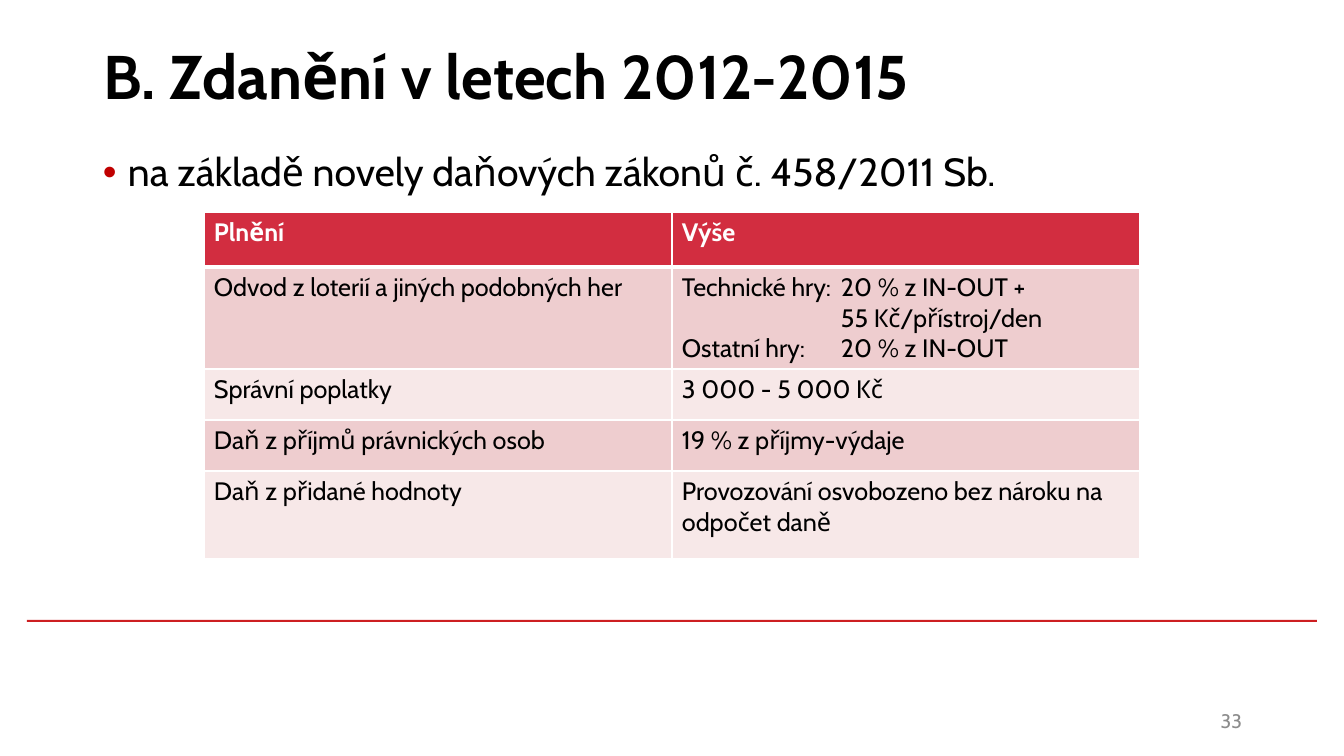
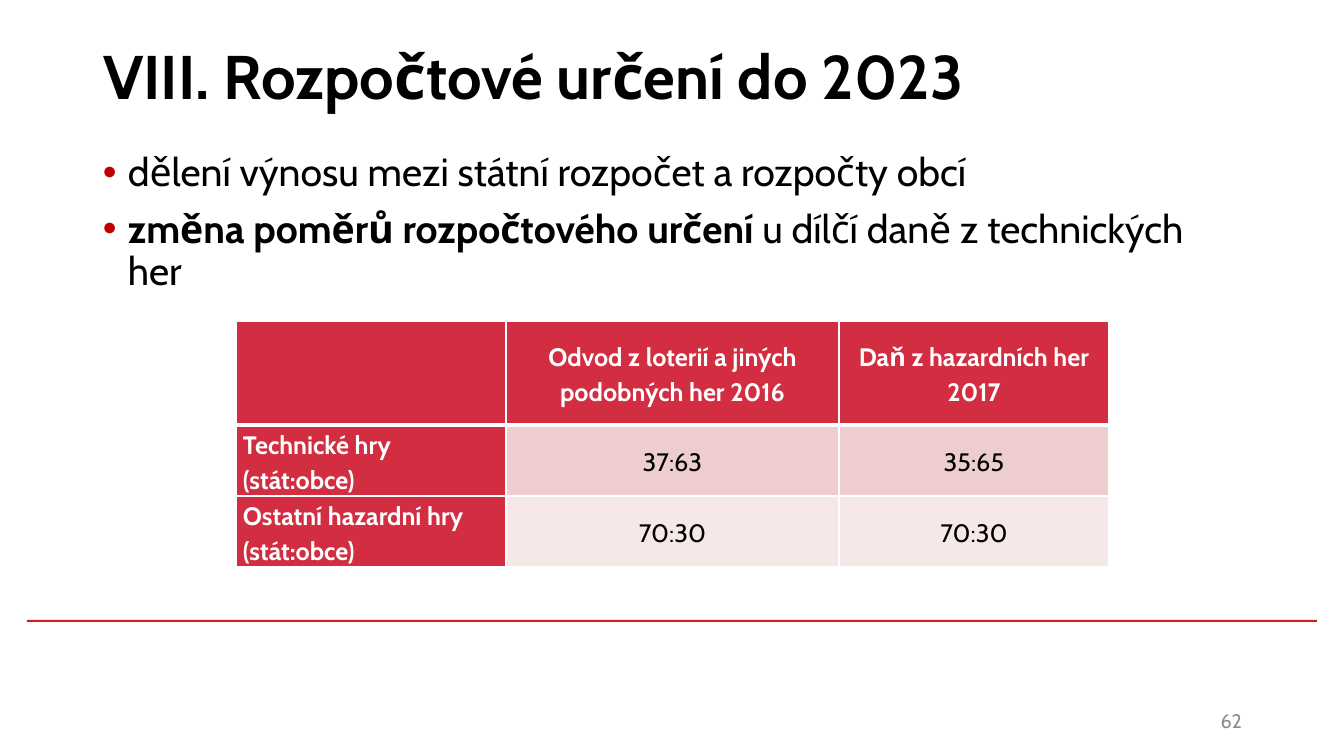
from lxml import etree
from pptx import Presentation
from pptx.dml.color import RGBColor
from pptx.enum.shapes import MSO_SHAPE
from pptx.enum.text import MSO_ANCHOR, MSO_AUTO_SIZE, PP_ALIGN
from pptx.oxml.ns import qn
from pptx.util import Emu, Pt

LEFT, MID, RIGHT = PP_ALIGN.LEFT, PP_ALIGN.CENTER, PP_ALIGN.RIGHT
TOP, CENTER = MSO_ANCHOR.TOP, MSO_ANCHOR.MIDDLE
NOFIT = MSO_AUTO_SIZE.NONE
RECT = MSO_SHAPE.RECTANGLE

FONT = "Cabin"
BLACK, WHITE, GRAY = "000000", "FFFFFF", "8C8C8C"
RULE, DOT, HEAD = "CD1F21", "C00000", "D22D40"
BANDS = ["EECDCF", "F7E8E8"]


def px(*nums):
    return [Emu(round(n * 914400 / 100.8)) for n in nums]


def write(frame, paras, size=18, color=BLACK, bold=False, align=LEFT,
          space=1.0, gap=0, hang=0, dot=None):
    """Fill a frame; text between bars is bold, a vertical tab breaks the line."""
    frame.word_wrap = True
    for i, text in enumerate(paras):
        para = frame.paragraphs[0] if i == 0 else frame.add_paragraph()
        para.alignment, para.line_spacing = align, space
        para.space_before = Pt(gap if i else 0)
        if hang:
            props = para._p.get_or_add_pPr()
            props.set("marL", str(px(hang)[0]))
            props.set("indent", str(-px(hang)[0]))
            if dot:
                tint = etree.SubElement(props, qn("a:buClr"))
                etree.SubElement(tint, qn("a:srgbClr"), val=dot)
                etree.SubElement(props, qn("a:buFont"), typeface="Arial")
                etree.SubElement(props, qn("a:buChar"), char="•")
        for j, part in enumerate(text.split("|")):
            for k, line in enumerate(part.split("\v")):
                if k:
                    para.add_line_break()
                if line:
                    run = para.add_run()
                    run.text = line
                    font = run.font
                    font.name, font.size = FONT, Pt(size)
                    font.bold = bold or j % 2 == 1
                    font.color.rgb = RGBColor.from_string(color)


slides = [
    dict(
        title="B. Zdanění v letech 2012-2015",
        points=["na základě novely daňových zákonů č. 458/2011 Sb."],
        page="33", at=(204, 212), cols=[468, 468], rows=[55, 102, 51, 51, 88],
        pad=(10, 5), anchor=TOP, align=LEFT, space=1.0, side=False,
        cells=[
            [["Plnění"], ["Výše"]],
            [["Odvod z loterií a jiných podobných her"],
             ["Technické hry:\t20 % z IN-OUT +\v55 Kč/přístroj/den",
              "Ostatní hry:\t20 % z IN-OUT"]],
            [["Správní poplatky"], ["3 000 - 5 000 Kč"]],
            [["Daň z příjmů právnických osob"], ["19 % z příjmy-výdaje"]],
            [["Daň z přidané hodnoty"],
             ["Provozování osvobozeno bez nároku na odpočet daně"]],
        ],
    ),
    dict(
        title="VIII. Rozpočtové určení do 2023",
        points=["dělení výnosu mezi státní rozpočet a rozpočty obcí",
                "|změna poměrů rozpočtového určení |u dílčí daně z technických her"],
        page="62", at=(236, 321), cols=[270, 333, 270], rows=[104, 71, 71],
        pad=(7, 0), anchor=CENTER, align=MID, space=1.15, side=True,
        cells=[
            [[], ["Odvod z loterií a jiných podobných her 2016"],
             ["Daň z hazardních her 2017"]],
            [["Technické hry (stát:obce)"], ["37:63"], ["35:65"]],
            [["Ostatní hazardní hry", "(stát:obce)"], ["70:30"], ["70:30"]],
        ],
    ),
]

deck = Presentation()
deck.slide_width, deck.slide_height = px(1344, 756)

for data in slides:
    slide = deck.slides.add_slide(deck.slide_layouts[5])
    shapes = slide.shapes

    rule = shapes.add_shape(RECT, *px(27, 620, 1290, 2))
    rule.shadow.inherit = False
    rule.fill.solid()
    rule.fill.fore_color.rgb = RGBColor.from_string(RULE)
    rule.line.fill.background()

    title = shapes.title
    title.left, title.top, title.width, title.height = px(93, 2, 1159, 146)
    title.text_frame.auto_size = NOFIT
    title.text_frame.vertical_anchor = CENTER
    write(title.text_frame, [data["title"]], size=44, bold=True)

    body = shapes.add_textbox(*px(93, 148, 1159, 461))
    write(body.text_frame, data["points"], size=28, space=0.9, gap=10,
          hang=25, dot=DOT)

    page = shapes.add_textbox(*px(950, 701, 302, 40))
    page.text_frame.vertical_anchor = CENTER
    write(page.text_frame, [data["page"]], size=14, color=GRAY, align=RIGHT)

    cols, rows = data["cols"], data["rows"]
    table = shapes.add_table(len(rows), len(cols),
                             *px(*data["at"], sum(cols), sum(rows))).table
    table.horz_banding = False
    for col, wide in zip(table.columns, px(*cols)):
        col.width = wide
    for row, high in zip(table.rows, px(*rows)):
        row.height = high

    for r, line in enumerate(data["cells"]):
        for c, paras in enumerate(line):
            cell = table.cell(r, c)
            side = data["side"] and c == 0
            head = r == 0 or side
            across, down = px(*data["pad"])
            cell.margin_left = cell.margin_right = across
            cell.margin_top = cell.margin_bottom = down
            cell.vertical_anchor = data["anchor"]
            props = cell._tc.get_or_add_tcPr()
            for edge in "LRTB":
                thick = (r, edge) in [(0, "B"), (1, "T")]
                border = etree.SubElement(props, qn("a:ln" + edge),
                                          w=str(Pt(3 if thick else 1)))
                fill = etree.SubElement(border, qn("a:solidFill"))
                etree.SubElement(fill, qn("a:srgbClr"), val=WHITE)
            cell.fill.solid()
            cell.fill.fore_color.rgb = RGBColor.from_string(
                HEAD if head else BANDS[(r - 1) % 2])
            write(cell.text_frame, paras, color=WHITE if head else BLACK,
                  bold=head, align=LEFT if side else data["align"],
                  space=data["space"],
                  hang=159 if any("\t" in text for text in paras) else 0)

deck.save("out.pptx")
